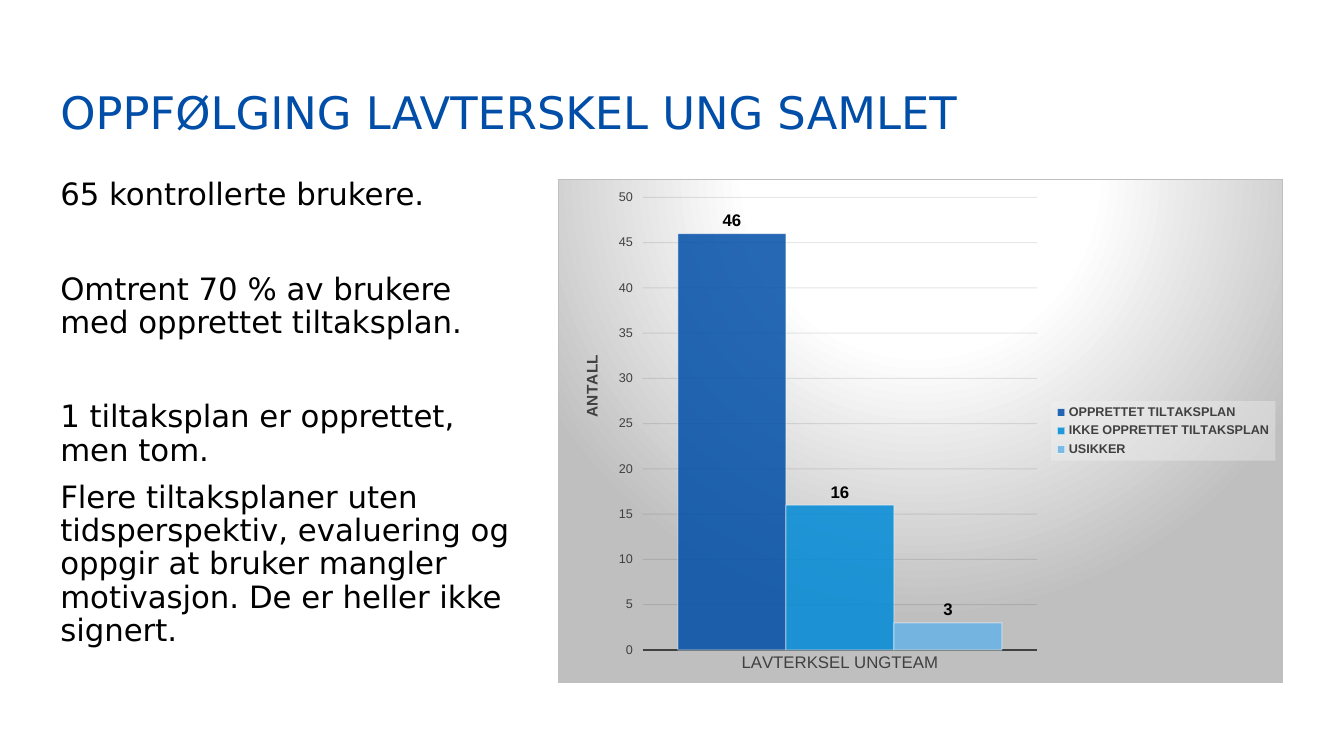
from pptx import Presentation
from pptx.chart.data import CategoryChartData as ChartData
from pptx.dml.color import RGBColor as Rgb
from pptx.enum.chart import XL_CHART_TYPE as ChartType, XL_LABEL_POSITION as LabelPosition
from pptx.enum.chart import XL_LEGEND_POSITION as LegendPosition, XL_TICK_MARK as TickMark
from pptx.enum.text import MSO_ANCHOR as Anchor, PP_ALIGN as Align
from pptx.oxml import parse_xml
from pptx.oxml.ns import nsdecls
from pptx.util import Cm, Pt

TITLE = "OPPFØLGING LAVTERSKEL UNG SAMLET"
BODY = [
    ("65 kontrollerte brukere.", 0),
    ("Omtrent 70 % av brukere med opprettet tiltaksplan.", 43.6),
    ("1 tiltaksplan er opprettet, men tom.", 43.6),
    ("Flere tiltaksplaner uten tidsperspektiv, evaluering og oppgir at bruker "
     "mangler motivasjon. De er heller ikke signert.", 10),
]
CATEGORY = "LAVTERKSEL UNGTEAM"
AXIS_TITLE = "ANTALL"
SERIES = [
    ("OPPRETTET TILTAKSPLAN", 46, "004EA7"),
    ("IKKE OPPRETTET TILTAKSPLAN", 16, "008AD7"),
    ("USIKKER", 3, "68B3E7"),
]

THEME = {
    "title": {"name": "DejaVu Sans", "size": 32, "color": "004EA8"},
    "body": {"name": "DejaVu Sans", "size": 22, "color": "000000"},
    "chart": {"name": "Arial", "size": 10, "color": "000000"},
    "category": {"name": "Arial", "size": 12, "color": "404040"},
    "value": {"name": "Arial", "size": 9, "color": "404040"},
    "axis title": {"name": "Arial", "size": 11, "color": "404040", "bold": True},
    "legend": {"name": "Arial", "size": 9, "color": "404040", "bold": True},
    "label": {"name": "Arial", "size": 12, "color": "000000", "bold": True},
    "axis line": "404040",
    "grid": "0D0D0D",
    "bar edge": "FFFFFF",
    "legend fill": "F2F2F2",
    "gradient": [(0, "FFFFFF"), (39, "FFFFFF"), (100, "BFBFBF")],
    "border": "BFBFBF",
}

SLIDE = (33.87, 19.05)
LEFT, TOP = 1.52, 4.52
TITLE_BOX = (LEFT, 0.81, 30.81, 2.69)
BODY_BOX = (LEFT, TOP, 11.73, 12.73)
CHART_BOX = (14.05, TOP, 18.29, 12.7)
PLOT_AREA = {"x": 0.117, "y": 0.035, "w": 0.544, "h": 0.9}
LEGEND_AREA = {"x": 0.68, "y": 0.44, "w": 0.31, "h": 0.118}
AXIS_TITLE_AREA = {"x": 0.028, "y": 0.342}


def set_all(target, values):
    for name, value in values.items():
        setattr(target, name, value)


def style_font(font, style):
    values = THEME[style]
    set_all(font, {"name": values["name"], "size": Pt(values["size"]),
                   "bold": values.get("bold", False)})
    font.color.rgb = Rgb.from_string(values["color"])


def style_line(line, color, width):
    line.color.rgb = Rgb.from_string(color)
    line.width = Pt(width)


def set_opacity(colors, percent):
    for color in colors:
        color.append(parse_xml(f'<a:alpha {nsdecls("a")} val="{percent * 1000}"/>'))


def set_layout(element, index, area, inner=False):
    for old in element.xpath("c:layout"):
        element.remove(old)
    target = '<c:layoutTarget val="inner"/>' if inner else ""
    modes = "".join(f'<c:{key}Mode val="edge"/>' for key in "xy")
    sizes = "".join(f'<c:{key} val="{value}"/>' for key, value in area.items())
    element.insert(index, parse_xml(
        f'<c:layout {nsdecls("c")}><c:manualLayout>{target}{modes}{sizes}'
        '</c:manualLayout></c:layout>'))


def add_text(slide, box, paragraphs, style, anchor):
    frame = slide.shapes.add_textbox(*map(Cm, box)).text_frame
    set_all(frame, {"word_wrap": True, "vertical_anchor": anchor, "margin_left": 0,
                    "margin_right": 0, "margin_top": 0, "margin_bottom": 0})
    for index, (text, before) in enumerate(paragraphs):
        paragraph = frame.add_paragraph() if index else frame.paragraphs[0]
        set_all(paragraph, {"alignment": Align.LEFT, "line_spacing": 0.9,
                            "space_before": Pt(before)})
        run = paragraph.add_run()
        run.text = text
        style_font(run.font, style)


def style_axes(chart):
    category, value = chart.category_axis, chart.value_axis
    set_all(category, {"major_tick_mark": TickMark.NONE, "minor_tick_mark": TickMark.NONE})
    style_font(category.tick_labels.font, "category")
    style_line(category.format.line, THEME["axis line"], 1.5)

    set_all(value, {"minimum_scale": 0, "maximum_scale": 50, "major_unit": 5,
                    "major_tick_mark": TickMark.OUTSIDE, "minor_tick_mark": TickMark.NONE,
                    "has_major_gridlines": True, "has_title": True})
    style_font(value.tick_labels.font, "value")
    value.format.line.fill.background()
    style_line(value.major_gridlines.format.line, THEME["grid"], 0.75)
    set_opacity(value._element.xpath("c:majorGridlines//a:srgbClr"), 10)

    title = value.axis_title
    frame = title.text_frame
    frame._txBody.bodyPr.set("rot", "-5400000")
    frame._txBody.bodyPr.set("vert", "horz")
    run = frame.paragraphs[0].add_run()
    run.text = AXIS_TITLE
    style_font(run.font, "axis title")
    set_layout(title._element, 1, AXIS_TITLE_AREA)


def style_series(chart):
    plot = chart.plots[0]
    set_all(plot, {"gap_width": 65, "overlap": 0, "vary_by_categories": False})
    for series, (_, _, color) in zip(plot.series, SERIES):
        series.format.fill.solid()
        series.format.fill.fore_color.rgb = Rgb.from_string(color)
        style_line(series.format.line, THEME["bar edge"], 0.75)
        set_opacity(series._element.xpath("c:spPr/a:solidFill/a:srgbClr"), 85)
        set_opacity(series._element.xpath("c:spPr/a:ln//a:srgbClr"), 50)
        labels = series.data_labels
        set_all(labels, {"show_value": True, "position": LabelPosition.OUTSIDE_END})
        style_font(labels.font, "label")


def style_legend(chart):
    chart.has_legend = True
    legend = chart.legend
    set_all(legend, {"position": LegendPosition.RIGHT, "include_in_layout": False})
    style_font(legend.font, "legend")
    set_layout(legend._element, 1, LEGEND_AREA)
    legend._element.xpath("c:overlay")[0].addnext(parse_xml(
        f'<c:spPr {nsdecls("c", "a")}><a:solidFill><a:srgbClr val="{THEME["legend fill"]}"/>'
        '</a:solidFill><a:ln><a:noFill/></a:ln></c:spPr>'))
    set_opacity(legend._element.xpath("c:spPr//a:srgbClr"), 39)


def style_background(chart):
    stops = "".join(f'<a:gs pos="{position * 1000}"><a:srgbClr val="{color}"/></a:gs>'
                    for position, color in THEME["gradient"])
    chart._chartSpace.chart.addnext(parse_xml(
        f'<c:spPr {nsdecls("c", "a")}><a:gradFill><a:gsLst>{stops}</a:gsLst>'
        '<a:path path="circle"><a:fillToRect l="50000" t="-80000" r="50000" b="180000"/>'
        f'</a:path></a:gradFill><a:ln w="{Pt(0.75)}"><a:solidFill>'
        f'<a:srgbClr val="{THEME["border"]}"/></a:solidFill></a:ln></c:spPr>'))


def add_bar_chart(slide):
    data = ChartData()
    data.categories = [CATEGORY]
    for name, value, _ in SERIES:
        data.add_series(name, [value])
    chart = slide.shapes.add_chart(
        ChartType.COLUMN_CLUSTERED, *map(Cm, CHART_BOX), data).chart
    chart.has_title = False
    style_font(chart.font, "chart")
    style_axes(chart)
    style_series(chart)
    style_legend(chart)
    style_background(chart)
    set_layout(chart._chartSpace.chart.plotArea, 0, PLOT_AREA, inner=True)


def main():
    presentation = Presentation()
    presentation.slide_width, presentation.slide_height = map(Cm, SLIDE)
    slide = presentation.slides.add_slide(presentation.slide_layouts[6])
    add_text(slide, TITLE_BOX, [(TITLE, 0)], "title", Anchor.BOTTOM)
    add_text(slide, BODY_BOX, BODY, "body", Anchor.TOP)
    add_bar_chart(slide)
    presentation.save("out.pptx")


if __name__ == "__main__":
    main()
